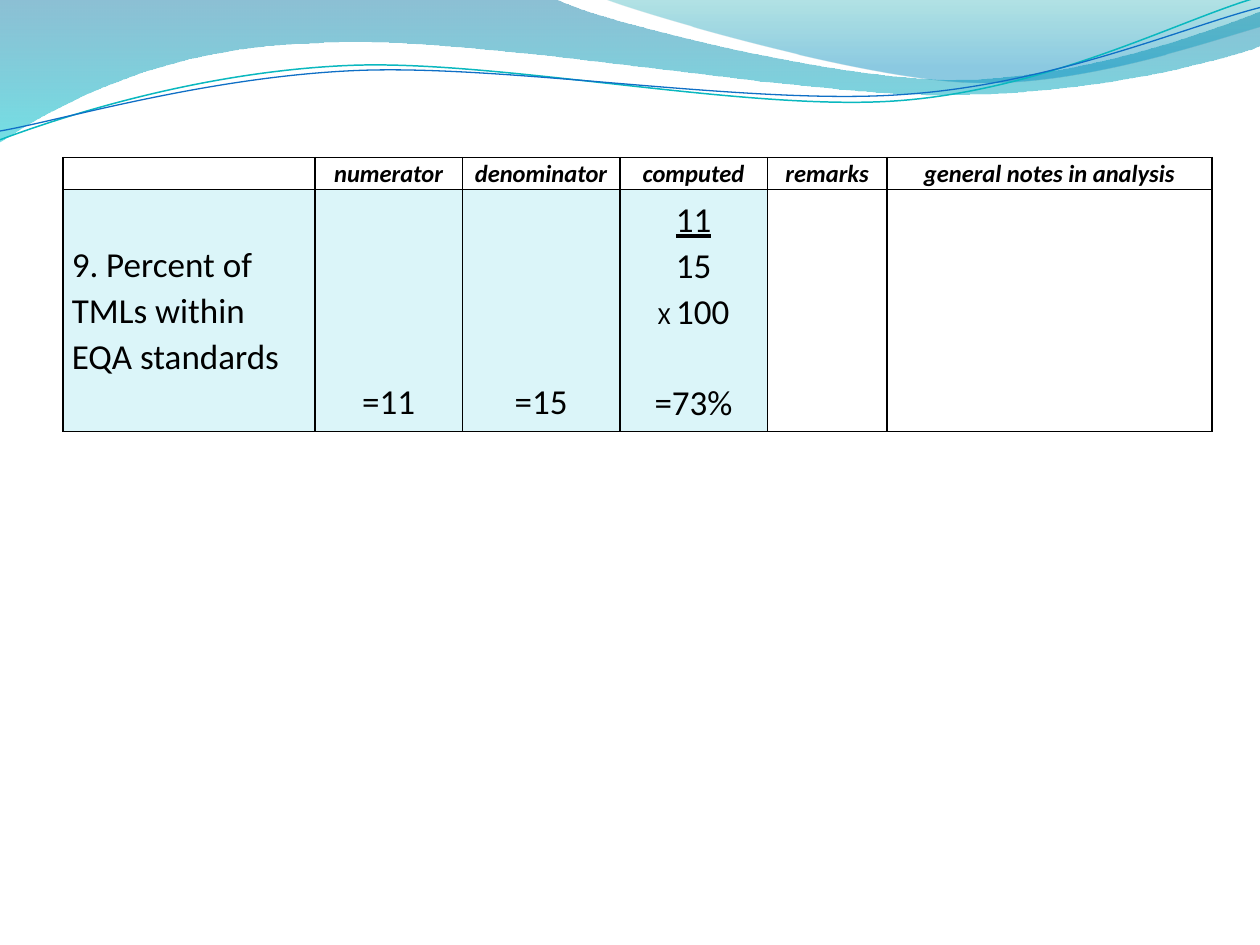
from lxml.etree import SubElement
from pptx import Presentation
from pptx.dml.color import RGBColor
from pptx.enum.text import MSO_ANCHOR, PP_ALIGN
from pptx.oxml.ns import qn
from pptx.util import Inches, Pt

BLACK, PALE = "000000", "DBF5F9"
COLS = [2, 1.17, 1.25, 1.17, 0.95, 2.58]
ROWS = [0.25, 1.92]
HEADS = ["", "numerator", "denominator", "computed", "remarks", "general notes in analysis"]
BAND = [
    (0, 0), [(4.4, -0.01)],
    [(4.76, 0.17), (6.64, 0.63), (7.58, 0.63)],
    [(8.53, 0.63), (9.58, 0.26), (10, 0.09)], [(10.01, 0.36)],
    [(9.83, 0.44), (8.7, 0.76), (7.46, 0.75)],
    [(6.22, 0.75), (3.82, 0.28), (2.57, 0.34)],
    [(1.29, 0.36), (0.46, 0.83), (-0.01, 1.13)], [(0, 0)],
]
CREST = [
    (4.79, -0.01),
    [(5.09, 0.11), (6.82, 0.62), (7.69, 0.65)],
    [(8.56, 0.69), (9.61, 0.32), (10, 0.21)], [(10, 0)], [(4.79, -0.01)],
]
TEAL = [
    (0, 1.11),
    [(0.48, 0.93), (1.58, 0.57), (2.77, 0.52)],
    [(3.95, 0.47), (5.93, 0.89), (7.13, 0.8)],
    [(8.33, 0.71), (9.38, 0.15), (9.98, -0.02)],
]
BLUE = [
    (0, 1.04),
    [(0.47, 0.96), (1.64, 0.61), (2.83, 0.56)],
    [(4.03, 0.51), (5.97, 0.84), (7.17, 0.75)],
    [(8.36, 0.67), (9.41, 0.21), (10, 0.06)],
]


def rgb(code):
    """Return the colour for a hex string."""
    return RGBColor.from_string(code)


def outline(slide, path, close):
    """Add a freeform of lines and cubic curves."""
    first, *segs = path
    pen = slide.shapes.build_freeform(Inches(first[0]), Inches(first[1]), scale=1.0)
    pen.add_line_segments([(Inches(x), Inches(y)) for *_, (x, y) in segs], close=close)
    shape = pen.convert_to_shape()
    shape.shadow.inherit = False
    for line, seg in zip(list(shape.element.iter(qn("a:lnTo"))), segs):
        if len(seg) == 3:
            bend(shape, line, seg)
    return shape


def bend(shape, line, seg):
    """Turn a line of the outline into a cubic curve."""
    curve = line.getparent().makeelement(qn("a:cubicBezTo"))
    for x, y in seg:
        SubElement(curve, qn("a:pt"), x=str(Inches(x) - shape.left), y=str(Inches(y) - shape.top))
    line.getparent().replace(line, curve)


def add_wave(slide, path, stops):
    """Add a translucent area that shades from top to bottom."""
    shape = outline(slide, path, True)
    shape.line.fill.background()
    shape.fill.gradient()
    shape.fill.gradient_angle = 270
    for stop, (pos, code, _) in zip(shape.fill.gradient_stops, stops):
        stop.position = pos
        stop.color.rgb = rgb(code)
    grad = shape.element.spPr.find(qn("a:gradFill"))
    for clr, (_, _, alpha) in zip(grad.iter(qn("a:srgbClr")), stops):
        SubElement(clr, qn("a:alpha"), val=str(alpha * 1000))


def add_curve(slide, path, code, width):
    """Add an open curved line."""
    shape = outline(slide, path, False)
    shape.fill.background()
    shape.line.color.rgb = rgb(code)
    shape.line.width = Pt(width)


def frame(cell, fill):
    """Give a cell black borders and its fill."""
    props = cell._tc.get_or_add_tcPr()
    for side in ("lnL", "lnR", "lnT", "lnB"):
        line = SubElement(props, qn(f"a:{side}"), w=str(Pt(1)))
        solid = SubElement(line, qn("a:solidFill"))
        SubElement(solid, qn("a:srgbClr"), val=BLACK)
    if fill:
        cell.fill.solid()
        cell.fill.fore_color.rgb = rgb(fill)
    else:
        cell.fill.background()


def write(cell, lines, size, head=False, align=PP_ALIGN.CENTER, anchor=MSO_ANCHOR.MIDDLE):
    """Write one paragraph a line, each given as a list of runs."""
    cell.margin_left = cell.margin_right = Inches(0.08 if head else 0.07)
    cell.margin_top = cell.margin_bottom = 0
    cell.vertical_anchor = anchor
    box = cell.text_frame
    for i, runs in enumerate(lines):
        para = box.add_paragraph() if i else box.paragraphs[0]
        para.alignment = align
        para.line_spacing = 1.07
        font = para.font
        font.name, font.size = "Calibri", Pt(size)
        font.bold = font.italic = head
        font.color.rgb = rgb(BLACK)
        for text in runs:
            para.add_run().text = text
    return box.paragraphs


def add_grid(slide):
    """Add the indicator table."""
    table = slide.shapes.add_table(
        2, len(COLS), Inches(0.5), Inches(1.25), Inches(sum(COLS)), Inches(sum(ROWS))).table
    table.first_row = table.horz_banding = False
    for col, width in zip(table.columns, COLS):
        col.width = Inches(width)
    for row, height in zip(table.rows, ROWS):
        row.height = Inches(height)
    for i, head in enumerate(HEADS):
        write(table.cell(0, i), [[head] if head else []], 14, True)
        frame(table.cell(0, i), None)
        frame(table.cell(1, i), PALE if i < 4 else None)
    write(table.cell(1, 0), [["9. Percent of TMLs within EQA standards"]], 20, align=PP_ALIGN.LEFT)
    for i, text in ((1, "=11"), (2, "=15")):
        write(table.cell(1, i), [[text]], 20, anchor=MSO_ANCHOR.BOTTOM)
        table.cell(1, i).margin_bottom = Inches(0.06)
    paras = write(table.cell(1, 3), [["11"], ["15"], ["X ", "100"], ["=73%"]], 20)
    paras[0].font.underline = True
    paras[2].runs[0].font.size = Pt(14)
    paras[3].space_before = Pt(26)


def main():
    """Build and save the slide."""
    deck = Presentation()
    deck.slide_width, deck.slide_height = Inches(10), Inches(7.5)
    slide = deck.slides.add_slide(deck.slide_layouts[6])
    add_wave(slide, BAND, [(0, "0074A1", 45), (1, "00C6CF", 55)])
    add_wave(slide, CREST, [(0, "00A1A9", 30), (0.8, "008BBF", 45)])
    add_curve(slide, TEAL, "0AB8BF", 0.85)
    add_curve(slide, BLUE, "0F6FC6", 0.75)
    add_grid(slide)
    deck.save("out.pptx")


if __name__ == "__main__":
    main()
